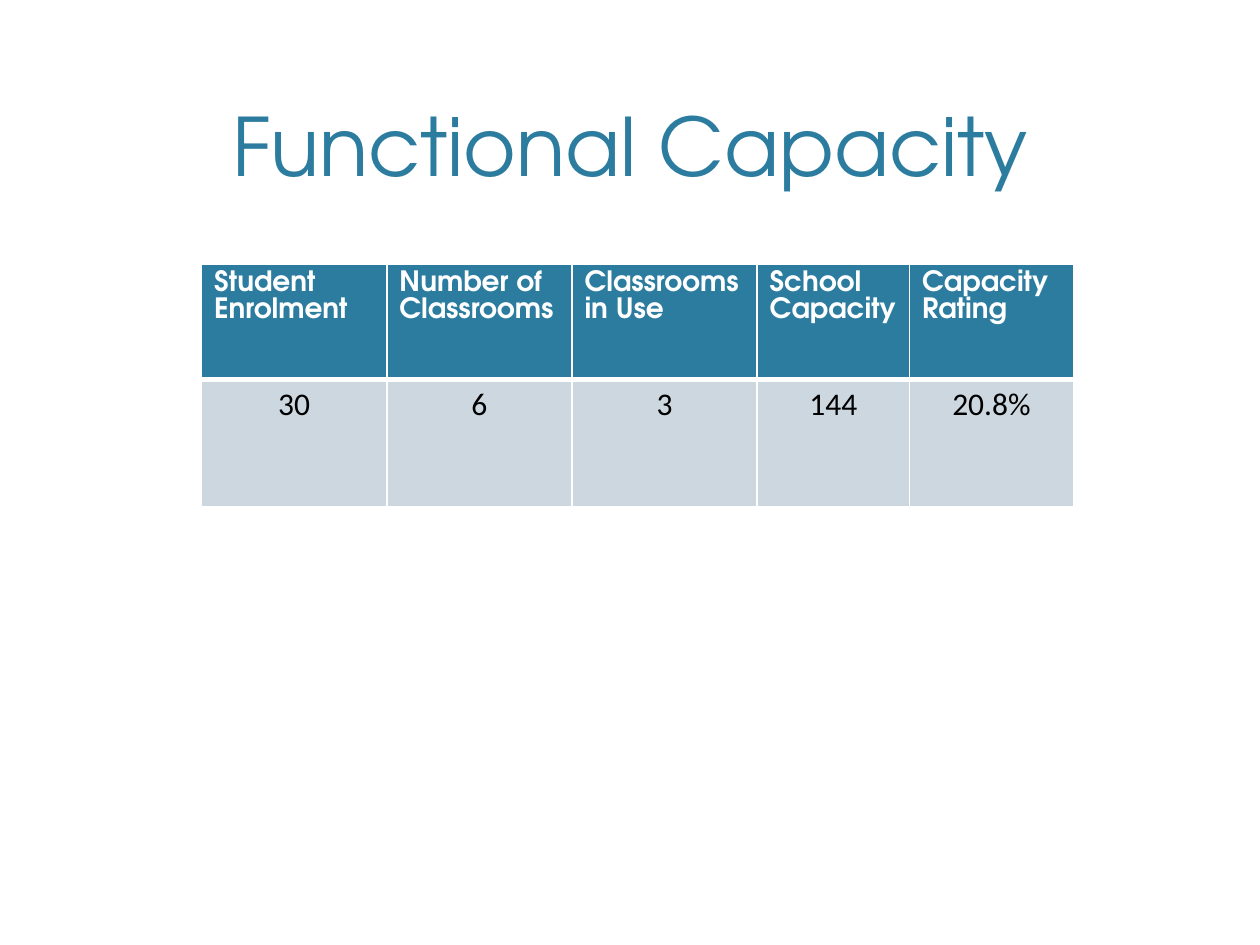
from lxml.etree import SubElement
from pptx import Presentation
from pptx.dml.color import RGBColor
from pptx.enum.text import MSO_ANCHOR, MSO_AUTO_SIZE, PP_ALIGN
from pptx.oxml.ns import qn
from pptx.util import Inches, Pt

TEAL = RGBColor(0x2C, 0x7C, 0x9F)
MIST = RGBColor(0xCD, 0xD7, 0xDF)
WHITE = RGBColor(0xFF, 0xFF, 0xFF)
BLACK = RGBColor(0, 0, 0)
HEAD_FONT, BODY_FONT = "TeX Gyre Adventor", "Calibri"

HEADERS = ["Student Enrolment", "Number of Classrooms", "Classrooms in Use",
           "School Capacity", "Capacity Rating"]
VALUES = ["30", "6", "3", "144", "20.8%"]
COL_WIDTHS = [1.47, 1.47, 1.47, 1.21, 1.3]
ROW_HEIGHTS = [0.91, 1.01]


class Deck:
    """Holds the slide style and the current slide, and places elements by shares of the slide size."""

    def __init__(self, width, height):
        self.prs = Presentation()
        self.prs.slide_width, self.prs.slide_height = Inches(width), Inches(height)
        self.s = self.prs.slides.add_slide(self.prs.slide_layouts[5])

    def box(self, x, y, w, h):
        W, H = self.prs.slide_width, self.prs.slide_height
        return int(x * W), int(y * H), int(w * W), int(h * H)

    def font(self, p, name, size, color, bold=False):
        p.font.name, p.font.size, p.font.bold = name, Pt(size), bold
        p.font.color.rgb = color

    def title(self, text, *share):
        sp = self.s.shapes.title
        sp.left, sp.top, sp.width, sp.height = self.box(*share)
        tf = sp.text_frame
        tf.text = text
        tf.auto_size = MSO_AUTO_SIZE.NONE
        tf.vertical_anchor = MSO_ANCHOR.BOTTOM
        p = tf.paragraphs[0]
        p.alignment = PP_ALIGN.CENTER
        self.font(p, HEAD_FONT, 46, TEAL)

    def borders(self, cell, top, bottom):
        tcPr = cell._tc.get_or_add_tcPr()
        sides = {"a:lnL": 1, "a:lnR": 1, "a:lnT": top, "a:lnB": bottom}
        for i, (tag, width) in enumerate(sides.items()):
            ln = SubElement(tcPr, qn(tag), w=str(Pt(width)))
            fill = SubElement(ln, qn("a:solidFill"))
            SubElement(fill, qn("a:srgbClr"), val=str(WHITE))
            tcPr.insert(i, ln)

    def cell(self, cell, text, header):
        cell.text = text
        cell.fill.solid()
        cell.fill.fore_color.rgb = TEAL if header else MIST
        p = cell.text_frame.paragraphs[0]
        if header:
            p.line_spacing = Pt(15)
            self.font(p, HEAD_FONT, 16, WHITE, bold=True)
            self.borders(cell, 1, 3)
        else:
            p.alignment = PP_ALIGN.CENTER
            self.font(p, BODY_FONT, 18, BLACK)
            self.borders(cell, 3, 1)

    def table(self, rows, widths, heights, *share):
        tbl = self.s.shapes.add_table(len(rows), len(widths), *self.box(*share)).table
        for col, width in zip(tbl.columns, widths):
            col.width = Inches(width)
        for r, (row, height) in enumerate(zip(rows, heights)):
            tbl.rows[r].height = Inches(height)
            for c, text in enumerate(row):
                self.cell(tbl.cell(r, c), text, header=r == 0)


def main():
    deck = Deck(10, 7.5)
    deck.title("Functional Capacity", 0.06, 0.02, 0.88, 0.19)
    deck.table([HEADERS, VALUES], COL_WIDTHS, ROW_HEIGHTS, 0.16, 0.28, 0.69, 0.26)
    deck.prs.save("out.pptx")


if __name__ == "__main__":
    main()
